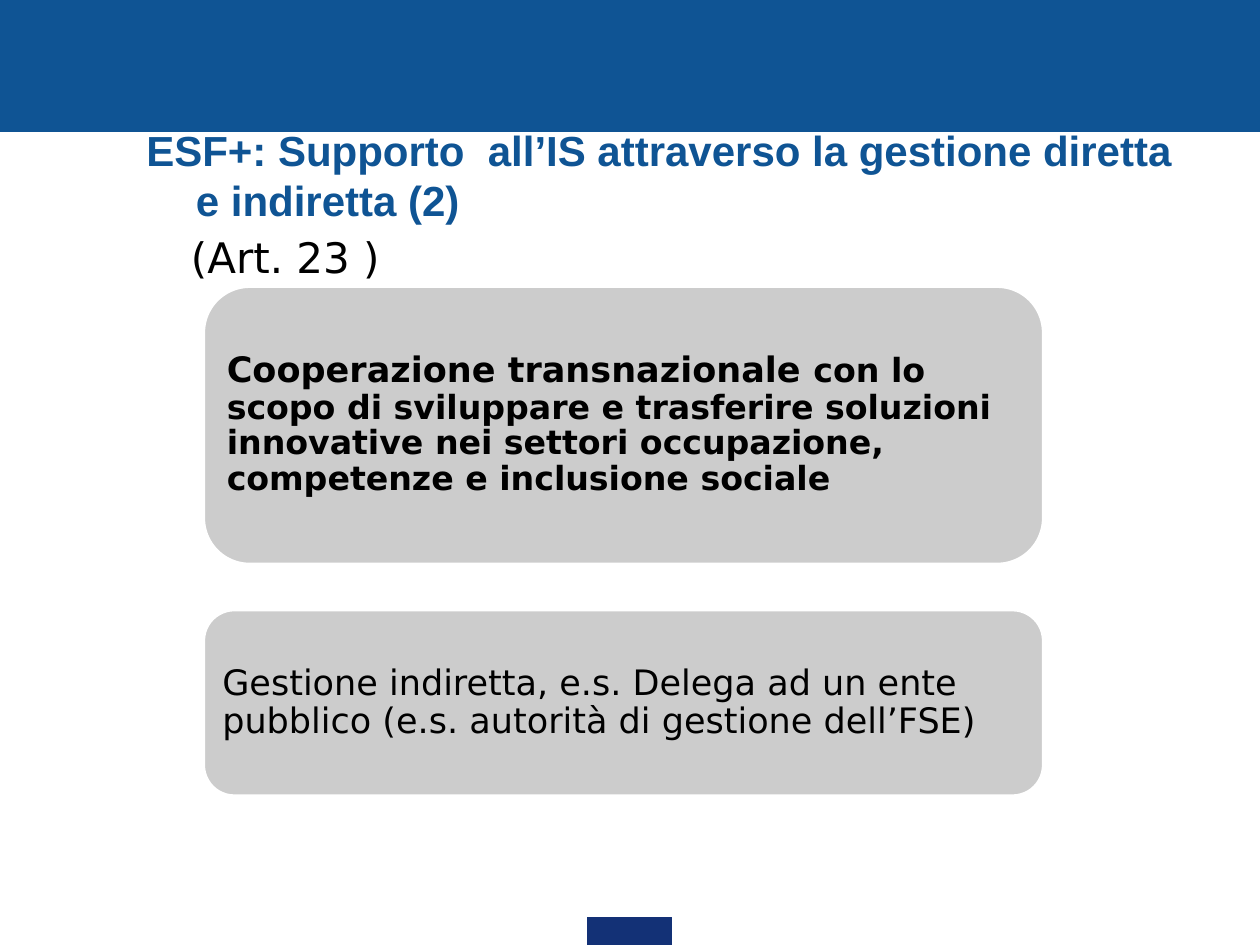
"""Build a slide on ESF+ support for social innovation, with two rounded cards."""
from dataclasses import dataclass

from pptx import Presentation
from pptx.dml.color import RGBColor
from pptx.enum.shapes import MSO_SHAPE
from pptx.enum.text import MSO_ANCHOR, PP_ALIGN
from pptx.util import Cm, Pt


@dataclass(frozen=True)
class Theme:
    blue: str = "0F5494"
    navy: str = "133176"
    grey: str = "CCCCCC"
    white: str = "FFFFFF"
    black: str = "000000"
    head: str = "Arial"
    body: str = "DejaVu Sans"
    big: int = 24
    mid: int = 20
    low: int = 19


theme = Theme()
deck = Presentation()
deck.slide_width, deck.slide_height = Cm(25.4), Cm(19.05)
slide = deck.slides.add_slide(deck.slide_layouts[6])
shapes = slide.shapes


def draw(kind, box, fill, line, width):
    shape = shapes.add_shape(kind, *map(Cm, box))
    shape.shadow.inherit = False
    shape.fill.solid()
    shape.fill.fore_color.rgb = RGBColor.from_string(fill)
    shape.line.color.rgb = RGBColor.from_string(line)
    shape.line.width = Pt(width)
    return shape


def write(shape, *runs, font=theme.body, color=theme.black, bold=False,
          anchor=MSO_ANCHOR.TOP, inset=None, left=0, first=0, lead=None):
    frame = shape.text_frame
    frame.word_wrap = True
    frame.vertical_anchor = anchor
    if inset is not None:
        frame.margin_left = frame.margin_right = Cm(inset)
        frame.margin_top = frame.margin_bottom = Cm(inset)
    para = frame.paragraphs[0]
    para.alignment = PP_ALIGN.LEFT
    para.line_spacing = lead
    props = para._p.get_or_add_pPr()
    props.set("marL", str(Cm(left)))
    props.set("indent", str(Cm(first)))
    for text, size in runs:
        run = para.add_run()
        run.text = text
        run.font.name, run.font.size, run.font.bold = font, Pt(size), bold
        run.font.color.rgb = RGBColor.from_string(color)


draw(MSO_SHAPE.RECTANGLE, (0, 0, 25.4, 2.66), theme.blue, theme.blue, 0.75)
draw(MSO_SHAPE.RECTANGLE, (11.84, 18.49, 1.7, 0.56), theme.navy, theme.navy, 0.75)

title = shapes.add_textbox(Cm(2.7), Cm(2.52), Cm(21.44), Cm(2.01))
write(title, ("ESF+: Supporto  all’IS attraverso la gestione diretta e indiretta (2)", theme.big),
      font=theme.head, color=theme.blue, bold=True, anchor=MSO_ANCHOR.MIDDLE, left=1, first=-1)
note = shapes.add_textbox(Cm(2.64), Cm(4.55), Cm(21.59), Cm(11.53))
write(note, ("(Art. 23 )", theme.big), left=0.96)

cards = [
    (5.77, 5.61, True, [
        ("Cooperazione transnazionale ", theme.mid),
        ("con lo scopo di sviluppare e trasferire soluzioni innovative nei settori "
         "occupazione, competenze e inclusione sociale", theme.low)]),
    (12.29, 3.76, False, [
        ("Gestione indiretta, e.s. Delega ad un ente pubblico "
         "(e.s. autorità di gestione dell’FSE)", theme.mid)]),
]
for top, height, bold, runs in cards:
    card = draw(MSO_SHAPE.ROUNDED_RECTANGLE, (4.1, top, 16.94, height),
                theme.grey, theme.white, 2)
    write(card, *runs, bold=bold, anchor=MSO_ANCHOR.MIDDLE, inset=0.2, lead=0.9)

deck.save("out.pptx")
